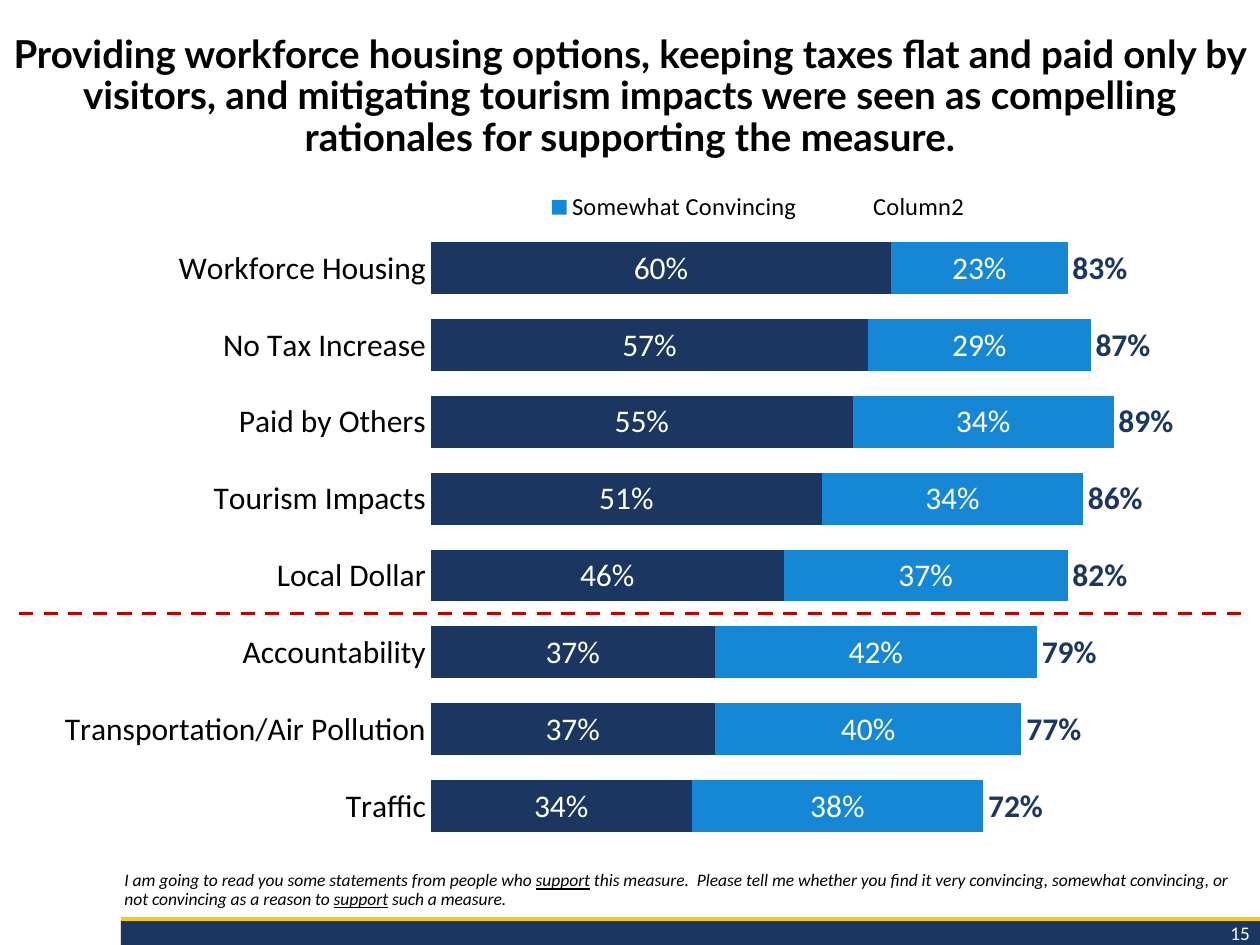
from dataclasses import dataclass

from lxml import etree
from pptx import Presentation
from pptx.chart.data import CategoryChartData
from pptx.dml.color import RGBColor
from pptx.enum.chart import XL_CHART_TYPE, XL_LABEL_POSITION, XL_LEGEND_POSITION, XL_TICK_MARK
from pptx.enum.dml import MSO_LINE
from pptx.enum.shapes import MSO_CONNECTOR, MSO_SHAPE
from pptx.enum.text import MSO_ANCHOR, MSO_AUTO_SIZE, PP_ALIGN
from pptx.oxml import parse_xml
from pptx.oxml.ns import nsdecls, qn
from pptx.util import Cm, Pt

STACKED_BAR = XL_CHART_TYPE.BAR_STACKED
LABEL_CENTER, LABEL_BASE = XL_LABEL_POSITION.CENTER, XL_LABEL_POSITION.INSIDE_BASE
LEGEND_TOP, NO_TICK = XL_LEGEND_POSITION.TOP, XL_TICK_MARK.NONE
TOP, BOTTOM = MSO_ANCHOR.TOP, MSO_ANCHOR.BOTTOM
LEFT, CENTER, RIGHT = PP_ALIGN.LEFT, PP_ALIGN.CENTER, PP_ALIGN.RIGHT
TITLE_ONLY = 5


@dataclass(frozen=True)
class Theme:
    black: RGBColor = RGBColor.from_string("000000")
    white: RGBColor = RGBColor.from_string("FFFFFF")
    navy: RGBColor = RGBColor.from_string("1B3661")
    bar_navy: RGBColor = RGBColor.from_string("1B3660")
    blue: RGBColor = RGBColor.from_string("1587D4")
    gold: RGBColor = RGBColor.from_string("FCCA09")
    red: RGBColor = RGBColor.from_string("C00000")
    title_font: str = "Lato"
    body_font: str = "Calibri"
    title_size: int = 22
    chart_size: int = 18
    legend_size: int = 14
    number_size: int = 11
    question_size: int = 10


@dataclass(frozen=True)
class Box:
    """Position and size in centimetres."""
    left: float
    top: float
    width: float
    height: float

    def lengths(self):
        return Cm(self.left), Cm(self.top), Cm(self.width), Cm(self.height)


THEME = Theme()

TITLE = ("Providing workforce housing options, keeping taxes flat and paid only by visitors, "
         "and mitigating tourism impacts were seen as compelling rationales for supporting "
         "the measure.")
# Each part of the question is a text and whether it is underlined
QUESTION = [
    ("I am going to read you some statements from people who ", False),
    ("support", True),
    (" this measure.  Please tell me whether you find it very convincing, somewhat "
     "convincing, or not convincing as a reason to ", False),
    ("support", True),
    (" such a measure.", False),
]
# Statement: very convincing, somewhat convincing, total
RESULTS = {
    "Workforce Housing": (0.60, 0.23, 0.83),
    "No Tax Increase": (0.57, 0.29, 0.87),
    "Paid by Others": (0.55, 0.34, 0.89),
    "Tourism Impacts": (0.51, 0.34, 0.86),
    "Local Dollar": (0.46, 0.37, 0.82),
    "Accountability": (0.37, 0.42, 0.79),
    "Transportation/Air Pollution": (0.37, 0.40, 0.77),
    "Traffic": (0.34, 0.38, 0.72),
}
# Name, bar colour, label colour, label position, bold label
SERIES = [
    ("Very Convincing", THEME.bar_navy, THEME.white, LABEL_CENTER, False),
    ("Somewhat Convincing", THEME.blue, THEME.white, LABEL_CENTER, False),
    ("Column2", None, THEME.bar_navy, LABEL_BASE, True),
]


def format_font(font, size, color, name=THEME.body_font, bold=False, italic=False):
    font.name, font.size, font.bold, font.italic = name, Pt(size), bold, italic
    font.color.rgb = color


def write_text(shape, parts, align=LEFT, anchor=TOP, line_spacing=1.0, **font_format):
    frame = shape.text_frame
    frame.word_wrap = True
    frame.auto_size = MSO_AUTO_SIZE.NONE
    frame.vertical_anchor = anchor
    paragraph = frame.paragraphs[0]
    paragraph.alignment, paragraph.line_spacing = align, line_spacing
    paragraph.space_before = Pt(0)
    for text, underline in parts:
        run = paragraph.add_run()
        run.text = text
        format_font(run.font, **font_format)
        run.font.underline = underline


def add_title(slide, box):
    title = slide.shapes.title
    title.left, title.top, title.width, title.height = box.lengths()
    write_text(title, [(TITLE, False)], align=CENTER, line_spacing=0.9, name=THEME.title_font,
               size=THEME.title_size, color=THEME.black, bold=True)


def add_footer(slide, box, number):
    # Navy band over a gold band, which shows as a thin stripe
    for color, offset in ((THEME.gold, 0), (THEME.navy, 0.08)):
        band = Box(box.left, box.top + offset, box.width, box.height - offset)
        shape = slide.shapes.add_shape(MSO_SHAPE.RECTANGLE, *band.lengths())
        shape.shadow.inherit = False
        shape.fill.solid()
        shape.fill.fore_color.rgb = color
        shape.line.fill.background()
    number_box = Box(box.left + box.width - 3.71, box.top - 0.05, 3.76, 0.74)
    write_text(slide.shapes.add_textbox(*number_box.lengths()), [(number, False)],
               align=RIGHT, size=THEME.number_size, color=THEME.white)


def add_question(slide, box):
    write_text(slide.shapes.add_textbox(*box.lengths()), QUESTION, anchor=BOTTOM,
               line_spacing=0.9, size=THEME.question_size, color=THEME.black, italic=True)


def set_layout(element, x, y, width, height, inner=False):
    """Place a chart part by fractions of the chart area."""
    for old in element.findall(qn("c:layout")):
        element.remove(old)
    layout = parse_xml(f"<c:layout {nsdecls('c')}><c:manualLayout/></c:layout>")
    settings = [("layoutTarget", "inner")] if inner else []
    settings += [("xMode", "edge"), ("yMode", "edge"),
                 ("x", x), ("y", y), ("w", width), ("h", height)]
    for tag, value in settings:
        etree.SubElement(layout[0], qn(f"c:{tag}")).set("val", str(value))
    return layout


def add_results_chart(slide, box):
    data = CategoryChartData(number_format="0%")
    data.categories = list(RESULTS)
    for (name, *_), values in zip(SERIES, zip(*RESULTS.values())):
        data.add_series(name, values)
    chart = slide.shapes.add_chart(STACKED_BAR, *box.lengths(), data).chart
    chart.has_title = False
    format_font(chart.font, THEME.chart_size, THEME.black)

    # Bars and their labels
    plot = chart.plots[0]
    plot.gap_width, plot.overlap, plot.vary_by_categories = 48, 100, False
    for series, (_, fill, label_color, position, bold) in zip(plot.series, SERIES):
        if fill is None:
            series.format.fill.background()
        else:
            series.format.fill.solid()
            series.format.fill.fore_color.rgb = fill
        labels = series.data_labels
        labels.show_value, labels.position = True, position
        labels.number_format, labels.number_format_is_linked = "0%", False
        format_font(labels.font, THEME.chart_size, label_color, bold=bold)

    # Axes
    categories, values = chart.category_axis, chart.value_axis
    categories.reverse_order = True
    categories.major_tick_mark = categories.minor_tick_mark = NO_TICK
    categories.format.line.fill.background()
    values.minimum_scale, values.maximum_scale, values.major_unit = 0, 1, 0.2
    values.has_major_gridlines = False
    values.visible = False

    # Legend with one hidden entry, and the places of legend and plot
    chart.has_legend = True
    legend = chart.legend
    legend.position, legend.include_in_layout = LEGEND_TOP, False
    format_font(legend.font, THEME.legend_size, THEME.black)
    legend_xml = legend.font and chart.element.find(".//" + qn("c:legend"))
    legend_layout = set_layout(legend_xml, 0.4, 0.02, 0.42, 0.07)
    legend_xml.insert(1, parse_xml(f"<c:legendEntry {nsdecls('c')}><c:idx val='2'/>"
                                   "<c:delete val='1'/></c:legendEntry>"))
    legend_xml.insert(2, legend_layout)
    plot_xml = chart.element.find(".//" + qn("c:plotArea"))
    plot_xml.insert(0, set_layout(plot_xml, 0.34, 0.086, 0.633, 0.852, inner=True))


def add_divider(slide, box):
    start, y, width, _ = box.lengths()
    line = slide.shapes.add_connector(MSO_CONNECTOR.STRAIGHT, start, y, start + width, y)
    line.line.color.rgb = THEME.red
    line.line.width, line.line.dash_style = Pt(2), MSO_LINE.DASH
    etree.SubElement(line.element.spPr, qn("a:effectLst"))


def main():
    presentation = Presentation()
    presentation.slide_width, presentation.slide_height = Cm(25.4), Cm(19.05)
    slide = presentation.slides.add_slide(presentation.slide_layouts[TITLE_ONLY])
    add_footer(slide, Box(2.44, 18.49, 22.96, 0.56), "15")
    add_question(slide, Box(2.26, 17.09, 23.09, 1.37))
    add_results_chart(slide, Box(0.38, 3.38, 24.43, 14.55))
    add_title(slide, Box(0, 0.58, 25.4, 3.1))
    add_divider(slide, Box(0.38, 12.37, 24.69, 0))
    presentation.save("out.pptx")


if __name__ == "__main__":
    main()
